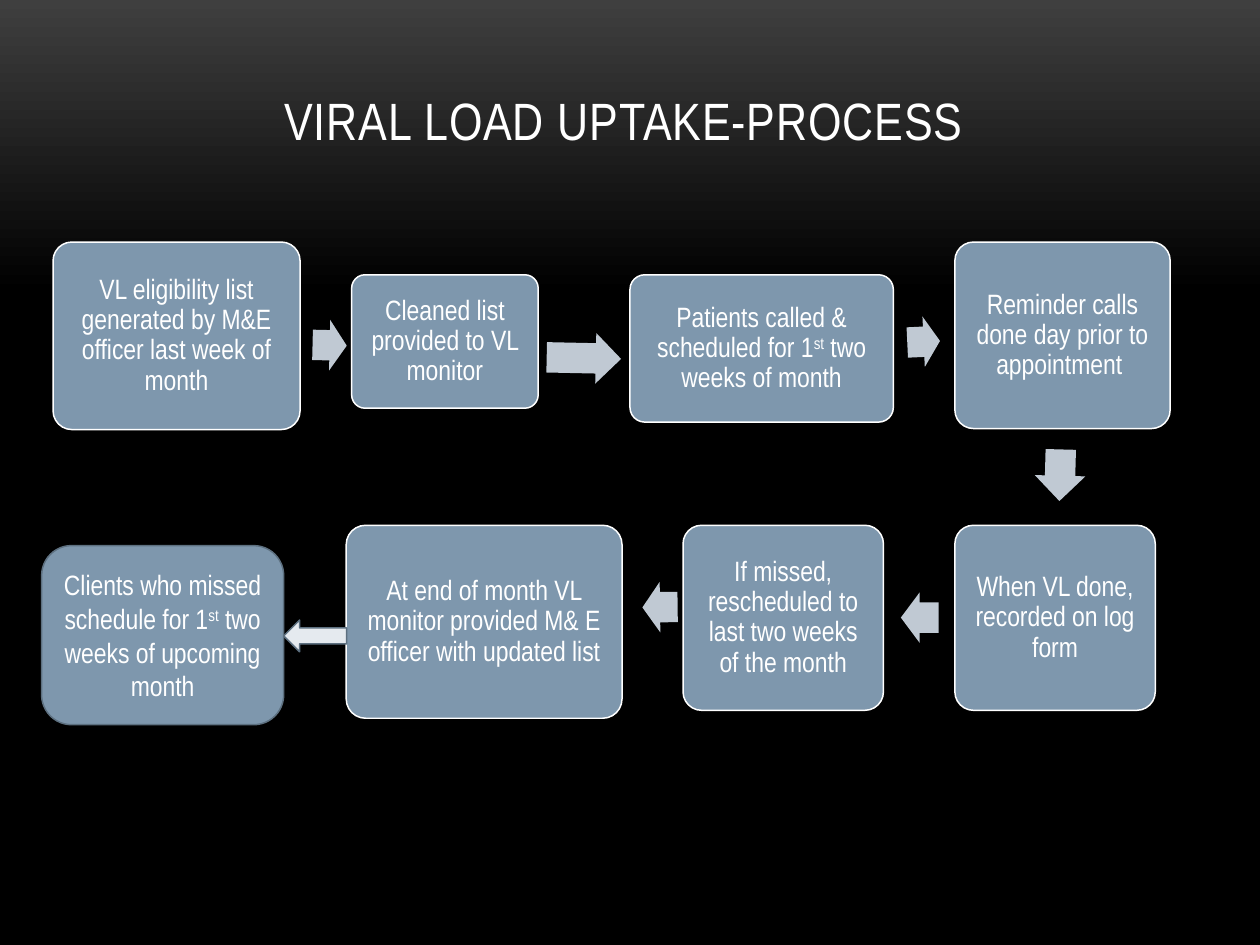
import pptx
import pptx.dml.color
import pptx.enum.shapes
import pptx.enum.text
import pptx.util

Cm = pptx.util.Cm
SHAPE = pptx.enum.shapes.MSO_SHAPE
ANCHOR = pptx.enum.text.MSO_ANCHOR
FONT = "Arial Narrow"
BOX_FILL, ARROW_FILL, EDGE = "7E97AD", "C0C9D3", "5D7080"

# Steps: text pieces (every second one is superscript), x, y, width, height.
# Arrows: x, y, length, rotation. All in cm from the row's corner.
UPPER_STEPS = [
    (["VL eligibility list generated by M&E officer last week of month"],
     0, 0, 4.98, 3.78),
    (["Cleaned list provided to VL monitor"], 6.02, 0.66, 3.76, 2.69),
    (["Patients called & scheduled for 1", "st", " two weeks of month"],
     11.63, 0.66, 5.31, 2.97),
    (["Reminder calls done day prior to appointment "], 18.18, 0, 4.34, 3.76),
]
UPPER_ARROWS = [(5.23, 1.57, 0.69, 1.4), (9.95, 1.83, 1.5, 1.2),
                (17.22, 1.5, 0.66, 357.3), (19.78, 4.19, 1.04, 91.5)]
LOWER_STEPS = [
    (["When VL done, recorded on log form"], 18.41, 0, 4.04, 3.73),
    (["If missed, rescheduled to last two weeks of the month"],
     12.93, 0, 4.04, 3.73),
    (["At end of month VL monitor provided M& E officer with updated list"],
     6.14, 0, 5.56, 3.89),
]
LOWER_ARROWS = [(17.32, 1.35, 0.76, 180), (12.11, 1.14, 0.71, 179.2)]


def rgb(value):
    return pptx.dml.color.RGBColor.from_string(value)


def write(tf, pieces, size=16, color="FFFFFF", anchor=ANCHOR.MIDDLE,
          spacing=1.0, inset=None, tracking=None):
    """Fill a frame with one centred paragraph; odd pieces are superscript."""
    tf.word_wrap = True
    tf.auto_size = pptx.enum.text.MSO_AUTO_SIZE.NONE
    tf.vertical_anchor = anchor
    if inset is not None:
        tf.margin_left = tf.margin_right = Cm(inset)
        tf.margin_top = tf.margin_bottom = Cm(inset)
    p = tf.paragraphs[0]
    p.alignment = pptx.enum.text.PP_ALIGN.CENTER
    p.line_spacing = spacing
    for i, text in enumerate(pieces):
        r = p.add_run()
        r.text = text
        r.font.name = FONT
        r.font.size = pptx.util.Pt(size)
        r.font.color.rgb = rgb(color)
        if i % 2:
            r.font._element.set("baseline", "30000")
        if tracking:
            r.font._element.set("spc", str(int(tracking * 100)))


def add_shape(s, kind, x, y, w, h, fill, line=None, adjust=(), rotation=0):
    sp = s.shapes.add_shape(kind, Cm(x), Cm(y), Cm(w), Cm(h))
    sp.shadow.inherit = False
    sp.rotation = rotation
    sp.fill.solid()
    sp.fill.fore_color.rgb = rgb(fill)
    if line:
        sp.line.color.rgb = rgb(line)
        sp.line.width = pptx.util.Pt(0.85)
    else:
        sp.line.fill.background()
    for i, value in enumerate(adjust):
        sp.adjustments[i] = value
    return sp


def add_background(s):
    fill = s.background.fill
    fill.gradient()
    fill.gradient_angle = 270
    stops = ((0, "3F3F3F"), (0.31, "000000"))
    for stop, (position, color) in zip(fill.gradient_stops, stops):
        stop.position = position
        stop.color.rgb = rgb(color)


def add_title(s, x, y, w, h):
    title = s.shapes.title
    title.left, title.top, title.width, title.height = map(Cm, (x, y, w, h))
    write(title.text_frame, ["VIRAL LOAD UPTAKE-PROCESS "], size=30,
          anchor=ANCHOR.BOTTOM, tracking=0.5)


def add_row(s, left, top, steps, arrows):
    for pieces, x, y, w, h in steps:
        sp = add_shape(s, SHAPE.ROUNDED_RECTANGLE, left + x, top + y, w, h,
                       BOX_FILL, "FFFFFF", [0.1])
        write(sp.text_frame, pieces, spacing=0.9, inset=0.18)
    for x, y, length, rotation in arrows:
        add_shape(s, SHAPE.RIGHT_ARROW, left + x, top + y, length, 1.02,
                  ARROW_FILL, adjust=[0.6, 0.5], rotation=rotation)


def add_final_step(s, left, top):
    w, h = 4.88, 3.61
    sp = add_shape(s, SHAPE.ROUNDED_RECTANGLE, left, top, w, h, BOX_FILL, EDGE)
    write(sp.text_frame, ["Clients who missed schedule for 1", "st",
                          " two weeks of upcoming month"])
    add_shape(s, SHAPE.LEFT_ARROW, left + w, top + 1.5, 1.27, 0.64,
              "E5EAEF", EDGE)


def main():
    prs = pptx.Presentation()
    prs.slide_width, prs.slide_height = Cm(25.4), Cm(19.05)
    s = prs.slides.add_slide(prs.slide_layouts[5])
    add_background(s)
    add_title(s, 1.7, 0.76, 22.02, 2.41)
    add_row(s, 1.07, 4.88, UPPER_STEPS, UPPER_ARROWS)
    add_row(s, 0.84, 10.59, LOWER_STEPS, LOWER_ARROWS)
    add_final_step(s, 0.84, 11)
    prs.save("out.pptx")


if __name__ == "__main__":
    main()
